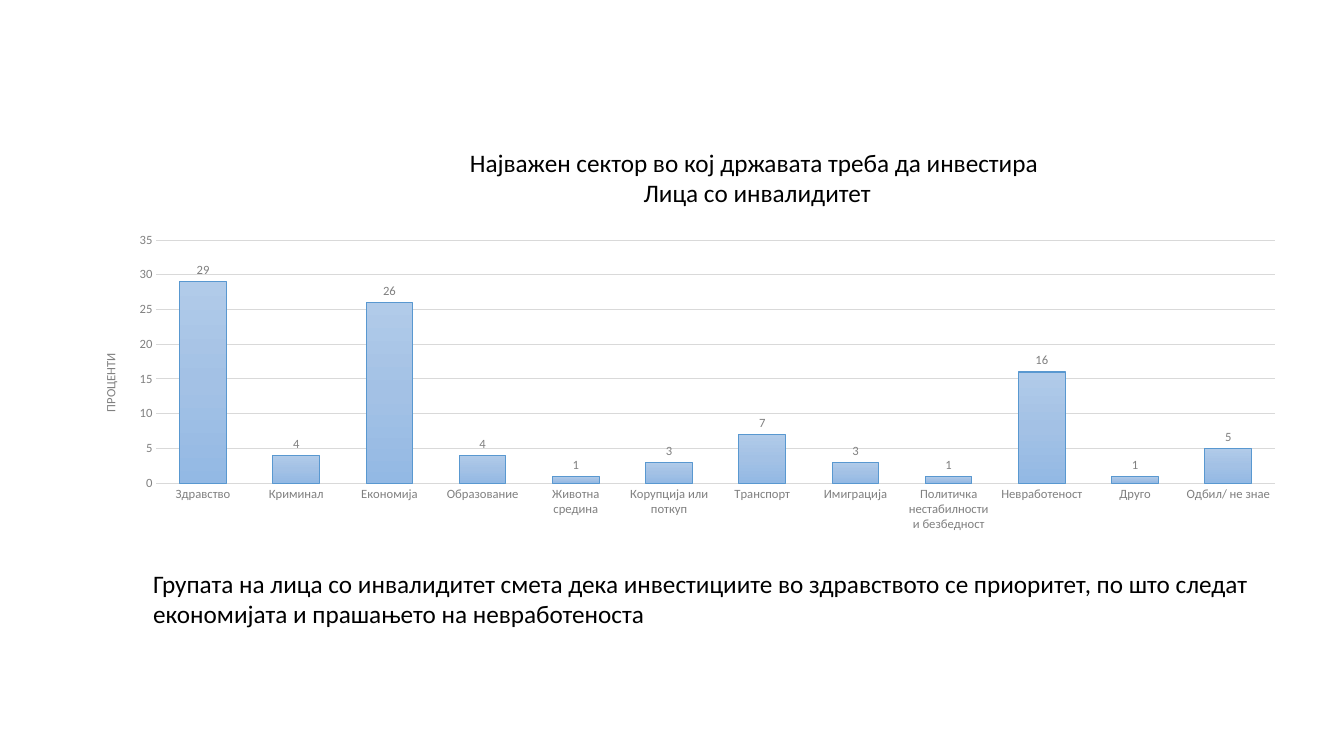
from copy import deepcopy
from dataclasses import dataclass

from lxml import etree
from pptx import Presentation
from pptx import util as u
from pptx.chart import data as chart_data
from pptx.dml.color import RGBColor
from pptx.enum import chart as ch, text
from pptx.oxml.ns import qn

PX = 9144


@dataclass(frozen=True)
class Theme:
    font: str = "Calibri"
    ink: str = "000000"
    muted: str = "808080"
    grid: str = "D9D9D9"
    bar_line: str = "5998D0"
    bar_fill: tuple[str, ...] = ("B1CBE9", "A3C1E5", "93B9E4")
    text_size: float = 18
    label_size: float = 9
    line_width: float = 0.75


@dataclass(frozen=True)
class Box:
    left: int
    top: int
    width: int
    height: int

    def emu(self) -> tuple[int, ...]:
        return tuple(side * PX for side in (self.left, self.top, self.width, self.height))


@dataclass(frozen=True)
class Line:
    words: str
    align: text.PP_ALIGN = text.PP_ALIGN.LEFT


@dataclass(frozen=True)
class TextBlock:
    box: Box
    lines: tuple[Line, ...]


@dataclass(frozen=True)
class Sector:
    name: str
    percent: int


THEME = Theme()
CHART_BOX = Box(75, 225, 1215, 308)
HEADING = TextBlock(Box(456, 141, 590, 71), (
    Line("Најважен сектор во кој државата треба да инвестира"),
    Line("Лица со инвалидитет", text.PP_ALIGN.CENTER),
))
FINDING = TextBlock(Box(142, 559, 1119, 71), (
    Line("Групата на лица со инвалидитет смета дека инвестициите во здравството се приоритет, по што следат"),
    Line("економијата и прашањето на невработеноста"),
))
SECTORS = (
    Sector("Здравство", 29),
    Sector("Криминал", 4),
    Sector("Економија", 26),
    Sector("Образование", 4),
    Sector("Животна средина", 1),
    Sector("Корупција или поткуп", 3),
    Sector("Транспорт", 7),
    Sector("Имиграција", 3),
    Sector("Политичка нестабилности и безбедност", 1),
    Sector("Невработеност", 16),
    Sector("Друго", 1),
    Sector("Одбил/ не знае", 5),
)


def style_font(font, size: float, color: str) -> None:
    font.name = THEME.font
    font.size = u.Pt(size)
    font.bold = False
    font.color.rgb = RGBColor.from_string(color)


def style_line(line, color: str) -> None:
    line.color.rgb = RGBColor.from_string(color)
    line.width = u.Pt(THEME.line_width)


def write_block(holder, block: TextBlock) -> None:
    holder.left, holder.top, holder.width, holder.height = block.box.emu()
    frame = holder.text_frame
    frame.text = "\n".join(line.words for line in block.lines)
    frame.word_wrap = False
    frame.auto_size = text.MSO_AUTO_SIZE.SHAPE_TO_FIT_TEXT
    frame.vertical_anchor = text.MSO_ANCHOR.TOP
    for paragraph, line in zip(frame.paragraphs, block.lines):
        paragraph.alignment = line.align
        for run in paragraph.runs:
            style_font(run.font, THEME.text_size, THEME.ink)


def set_layout(parent, index: int, **settings: str | float) -> None:
    layout = parent.find(qn("c:layout"))
    if layout is None:
        layout = etree.Element(qn("c:layout"))
        parent.insert(index, layout)
    manual = etree.SubElement(layout, qn("c:manualLayout"))
    for tag, value in settings.items():
        etree.SubElement(manual, qn(f"c:{tag}")).set("val", str(value))


def fill_bars(series) -> None:
    fill = series.format.fill
    fill.gradient()
    fill.gradient_angle = 270
    first_stop = series._element.xpath(".//a:gs")[0]
    first_stop.addnext(deepcopy(first_stop))
    last = len(THEME.bar_fill) - 1
    for index, (stop, color) in enumerate(zip(fill.gradient_stops, THEME.bar_fill)):
        stop.position = index / last
        stop.color.rgb = RGBColor.from_string(color)
    style_line(series.format.line, THEME.bar_line)


def style_axes(chart) -> None:
    sectors, percents = chart.category_axis, chart.value_axis
    for axis in (sectors, percents):
        axis.major_tick_mark = axis.minor_tick_mark = ch.XL_TICK_MARK.NONE
        style_font(axis.tick_labels.font, THEME.label_size, THEME.muted)
    sectors.has_major_gridlines = False
    style_line(sectors.format.line, THEME.grid)

    percents.minimum_scale, percents.maximum_scale, percents.major_unit = 0, 35, 5
    percents.tick_labels.number_format = "0"
    percents.tick_labels.number_format_is_linked = False
    percents.format.line.fill.background()
    style_line(percents.major_gridlines.format.line, THEME.grid)
    unit = percents.axis_title
    unit.text_frame.text = "ПРОЦЕНТИ"
    style_font(unit.text_frame.paragraphs[0].runs[0].font, THEME.label_size, THEME.muted)
    set_layout(unit._element, 1, xMode="edge", yMode="edge", x=0.02, y=0.4)


def add_sector_chart(slide) -> None:
    table = chart_data.CategoryChartData(number_format="0")
    table.categories = [sector.name for sector in SECTORS]
    table.add_series("Series 1", [sector.percent for sector in SECTORS])
    chart = slide.shapes.add_chart(
        ch.XL_CHART_TYPE.COLUMN_CLUSTERED, *CHART_BOX.emu(), table
    ).chart
    chart.has_title = chart.has_legend = False
    style_font(chart.font, 10, THEME.ink)
    columns = chart.plots[0]
    columns.gap_width, columns.overlap = 100, -24
    columns.vary_by_categories = False
    columns.has_data_labels = True
    labels = columns.data_labels
    labels.show_value = True
    labels.position = ch.XL_LABEL_POSITION.OUTSIDE_END
    labels.number_format, labels.number_format_is_linked = "0", False
    style_font(labels.font, THEME.label_size, THEME.muted)
    fill_bars(columns.series[0])
    style_axes(chart)
    plot_area = chart._chartSpace.find(".//" + qn("c:plotArea"))
    set_layout(plot_area, 0, layoutTarget="inner", xMode="edge", yMode="edge",
               x=0.066, y=0.043, w=0.913, h=0.783)


def main() -> None:
    deck = Presentation()
    deck.slide_width, deck.slide_height = 1333 * PX, 750 * PX
    slide = deck.slides.add_slide(deck.slide_layouts[5])
    add_sector_chart(slide)
    write_block(slide.shapes.title, HEADING)
    write_block(slide.shapes.add_textbox(*FINDING.box.emu()), FINDING)
    deck.save("out.pptx")


if __name__ == "__main__":
    main()
